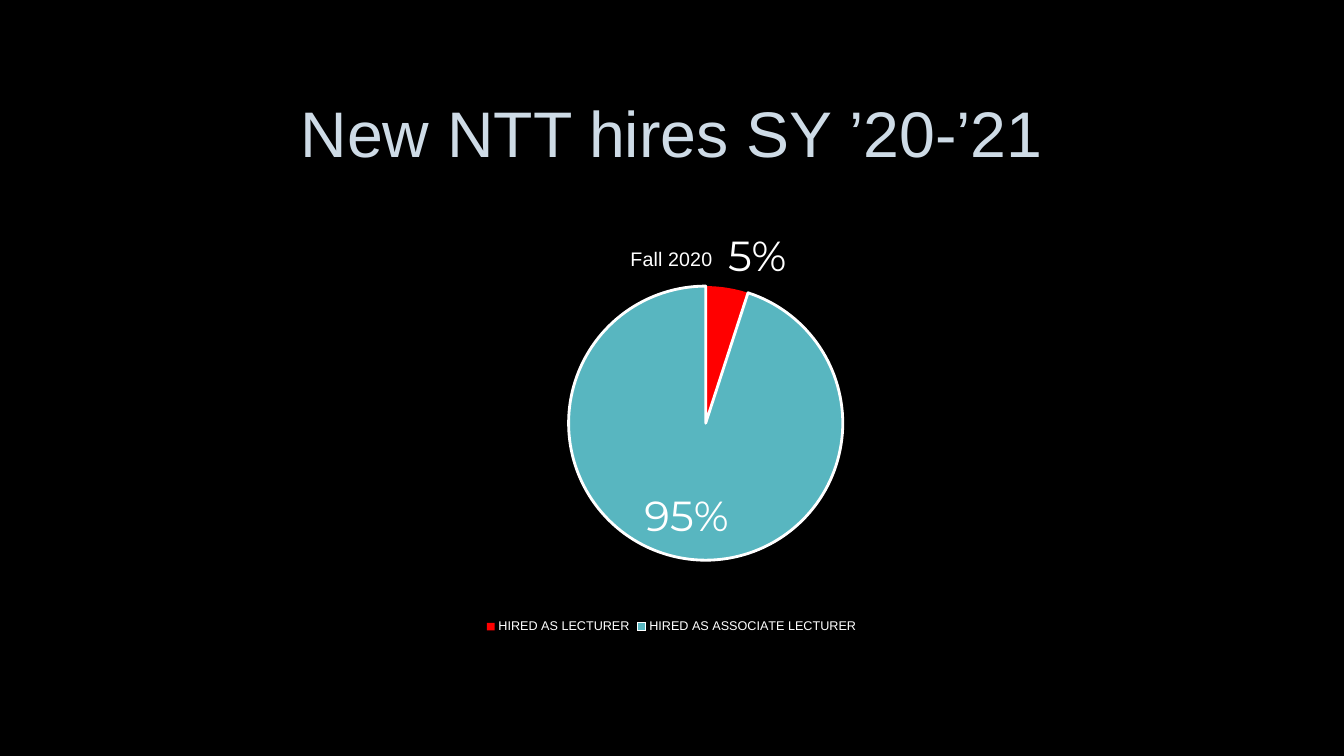
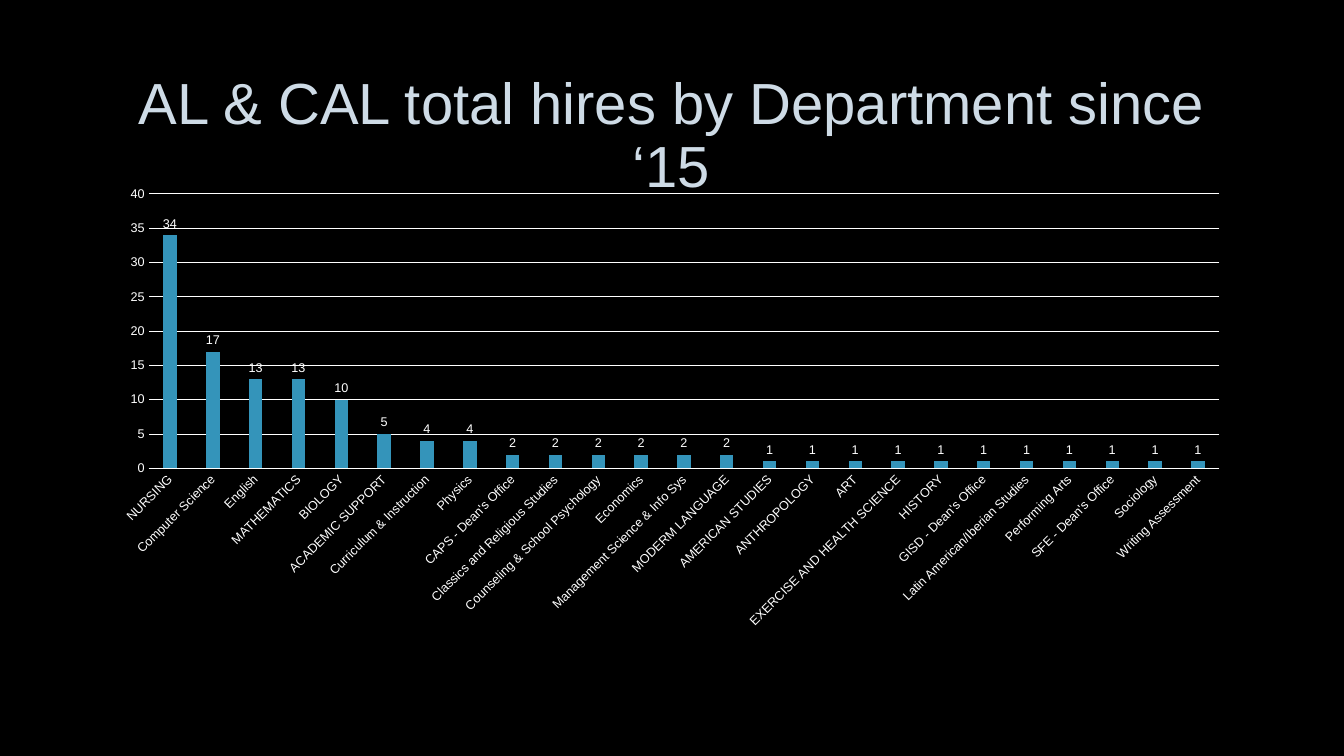
import pptx
import pptx.chart.data
import pptx.dml.color
import pptx.enum.chart
import pptx.enum.text
import pptx.oxml
import pptx.oxml.ns
import pptx.util

Inches = pptx.util.Inches
Pt = pptx.util.Pt
RGBColor = pptx.dml.color.RGBColor
ChartType = pptx.enum.chart.XL_CHART_TYPE
LabelPosition = pptx.enum.chart.XL_LABEL_POSITION

BLACK = RGBColor(0x00, 0x00, 0x00)
WHITE = RGBColor(0xFF, 0xFF, 0xFF)
PALE_BLUE = RGBColor(0xCE, 0xDB, 0xE6)
RED = RGBColor(0xFF, 0x00, 0x00)
TEAL = RGBColor(0x58, 0xB6, 0xC0)
BLUE = RGBColor(0x34, 0x94, 0xBA)

BODY_FONT = "Arial"
LABEL_FONT = "Montserrat"
TITLE_BOX = (1, 0.67, 11.32, 1.38)
PIE_BOX = (1, 2.27, 11.32, 4.06)
COLUMN_BOX = (1, 1.76, 11.32, 4.57)
PIE_PLOT = {"x": 0.06, "y": 0.14, "w": 0.94, "h": 0.67}

NEW_HIRES = {"HIRED AS LECTURER": 0.05, "HIRED AS ASSOCIATE LECTURER": 0.95}
DEPARTMENT_HIRES = {
    "NURSING": 34,
    "Computer Science": 17,
    "English": 13,
    "MATHEMATICS": 13,
    "BIOLOGY": 10,
    "ACADEMIC SUPPORT": 5,
    "Curriculum & Instruction": 4,
    "Physics": 4,
    "CAPS - Dean's Office": 2,
    "Classics and Religious Studies": 2,
    "Counseling & School Psychology": 2,
    "Economics": 2,
    "Management Science & Info Sys": 2,
    "MODERM LANGUAGE": 2,
    "AMERICAN STUDIES": 1,
    "ANTHROPOLOGY": 1,
    "ART": 1,
    "EXERCISE AND HEALTH SCIENCE": 1,
    "HISTORY": 1,
    "GISD - Dean's Office": 1,
    "Latin American/Iberian Studies": 1,
    "Performing Arts": 1,
    "SFE - Dean's Office": 1,
    "Sociology": 1,
    "Writing Assessment": 1,
}


def set_format(target, values):
    for name, value in values.items():
        setattr(target, name, value)


def style_font(font, size, color=WHITE, name=BODY_FONT):
    set_format(font, {"name": name, "size": Pt(size), "bold": False})
    font.color.rgb = color


def paint(part, color):
    part.format.fill.solid()
    part.format.fill.fore_color.rgb = color


def style_line(line, color, width):
    line.color.rgb = color
    line.width = Pt(width)


def add_page(deck, title, title_size):
    page = deck.slides.add_slide(deck.slide_layouts[6])
    page.background.fill.solid()
    page.background.fill.fore_color.rgb = BLACK
    box = page.shapes.add_textbox(*map(Inches, TITLE_BOX))
    set_format(box.text_frame, {
        "word_wrap": True,
        "vertical_anchor": pptx.enum.text.MSO_ANCHOR.MIDDLE,
    })
    para = box.text_frame.paragraphs[0]
    set_format(para, {
        "alignment": pptx.enum.text.PP_ALIGN.CENTER,
        "line_spacing": 0.9,
    })
    span = para.add_run()
    span.text = title
    style_font(span.font, title_size, PALE_BLUE)
    return page


def add_chart(page, kind, box, series_name, values):
    data = pptx.chart.data.CategoryChartData()
    data.categories = list(values)
    data.add_series(series_name, list(values.values()))
    chart = page.shapes.add_chart(kind, *map(Inches, box), data).chart
    style_font(chart.font, 10)
    return chart


def add_value_labels(plot, size, position, name=BODY_FONT, number_format="General"):
    plot.has_data_labels = True
    labels = plot.data_labels
    set_format(labels, {
        "show_value": True,
        "show_percentage": False,
        "number_format": number_format,
        "number_format_is_linked": False,
        "position": position,
    })
    style_font(labels.font, size, name=name)


def place_plot(chart, fractions):
    plot_area = chart.element.xpath("c:chart/c:plotArea")[0]
    for old_layout in plot_area.xpath("c:layout"):
        plot_area.remove(old_layout)
    sizes = "".join(f'<c:{key} val="{value}"/>' for key, value in fractions.items())
    plot_area.insert(0, pptx.oxml.parse_xml(
        f'<c:layout {pptx.oxml.ns.nsdecls("c")}><c:manualLayout>'
        '<c:layoutTarget val="inner"/><c:xMode val="edge"/><c:yMode val="edge"/>'
        f"{sizes}</c:manualLayout></c:layout>"))


def add_pie(page, box):
    chart = add_chart(page, ChartType.PIE, box, "Fall 2020", NEW_HIRES)
    chart.has_title = True
    heading = chart.chart_title.text_frame.paragraphs[0].add_run()
    heading.text = "Fall 2020"
    style_font(heading.font, 14)
    chart.has_legend = True
    set_format(chart.legend, {
        "position": pptx.enum.chart.XL_LEGEND_POSITION.BOTTOM,
        "include_in_layout": False,
    })
    style_font(chart.legend.font, 9)
    plot = chart.plots[0]
    plot.vary_by_categories = True
    lecturer, associate = (plot.series[0].points[index] for index in range(2))
    paint(lecturer, RED)
    lecturer.format.line.fill.background()
    paint(associate, TEAL)
    style_line(associate.format.line, WHITE, 2)
    add_value_labels(plot, 30, LabelPosition.BEST_FIT, LABEL_FONT, "0%")
    place_plot(chart, PIE_PLOT)


def add_columns(page, box):
    chart = add_chart(page, ChartType.COLUMN_CLUSTERED, box, "Series 1", DEPARTMENT_HIRES)
    set_format(chart, {"has_title": False, "has_legend": False})
    plot = chart.plots[0]
    set_format(plot, {"gap_width": 219, "overlap": -27, "vary_by_categories": False})
    paint(plot.series[0], BLUE)
    add_value_labels(plot, 9, LabelPosition.OUTSIDE_END)
    no_ticks = pptx.enum.chart.XL_TICK_MARK.NONE
    for axis in (chart.category_axis, chart.value_axis):
        set_format(axis, {"major_tick_mark": no_ticks, "minor_tick_mark": no_ticks})
        style_font(axis.tick_labels.font, 9)
    style_line(chart.category_axis.format.line, WHITE, 0.75)
    chart.element.xpath("c:chart/c:plotArea/c:catAx/c:txPr/a:bodyPr")[0].set("rot", "-2700000")
    set_format(chart.value_axis, {
        "minimum_scale": 0,
        "maximum_scale": 40,
        "major_unit": 5,
        "has_major_gridlines": True,
    })
    chart.value_axis.format.line.fill.background()
    style_line(chart.value_axis.major_gridlines.format.line, WHITE, 0.75)


def main():
    deck = pptx.Presentation()
    set_format(deck, {"slide_width": Inches(13.33), "slide_height": Inches(7.5)})
    add_pie(add_page(deck, "New NTT hires SY ’20-’21", 46), PIE_BOX)
    add_columns(add_page(deck, "AL & CAL total hires by Department since ‘15", 41.4), COLUMN_BOX)
    deck.save("out.pptx")


if __name__ == "__main__":
    main()
